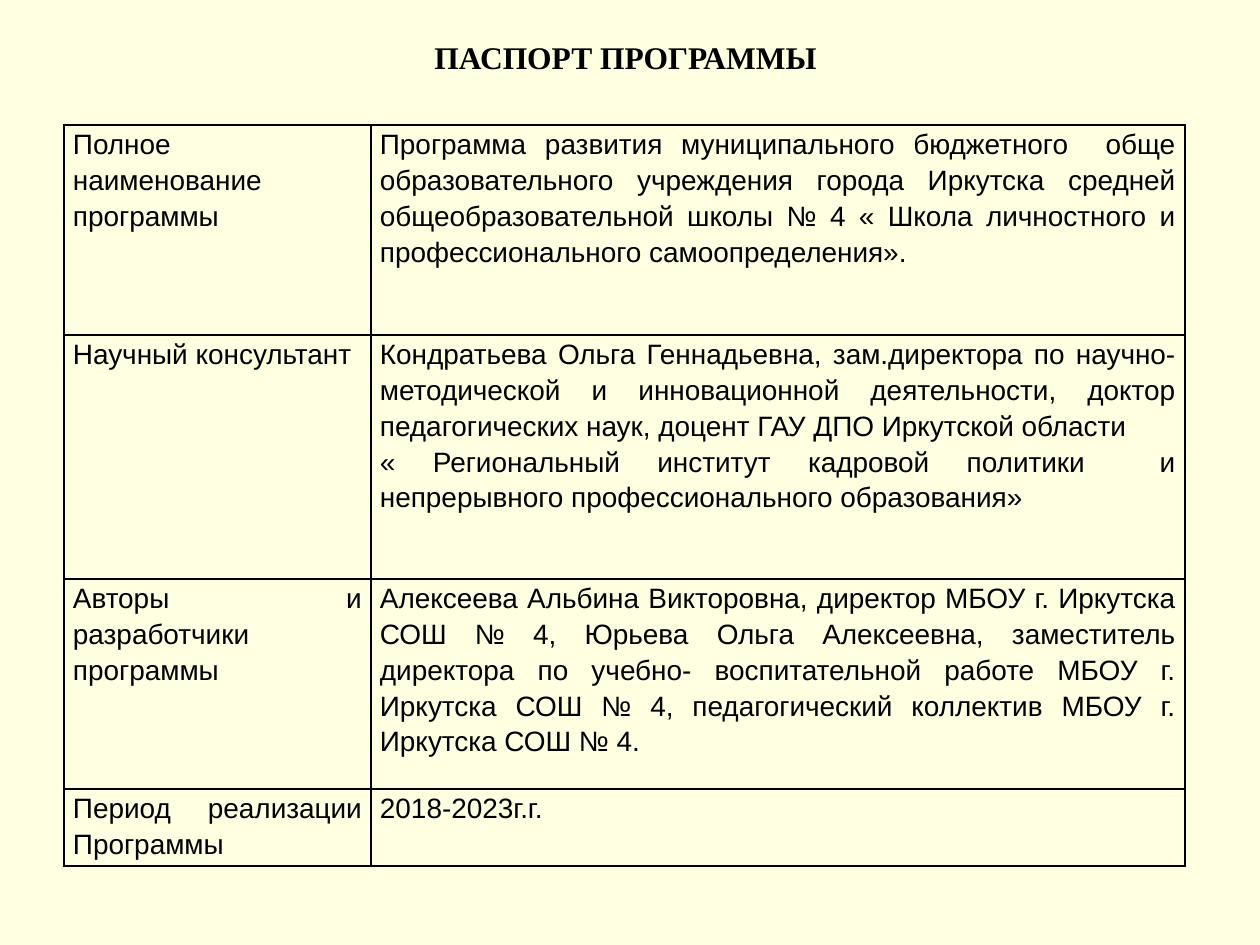
import pptx
import pptx.dml.color
import pptx.enum.text
import pptx.oxml
import pptx.oxml.ns
import pptx.util
from dataclasses import dataclass
from lxml import etree


@dataclass(frozen=True)
class Theme:
    background: str = "FFFFE1"
    ink: str = "000000"
    title_font: str = "Times New Roman"
    body_font: str = "Arial"
    title_size: int = 18
    body_size: int = 16
    line_spacing: float = 1.15
    border_pt: int = 1


THEME = Theme()
EMU_PER_PX = 914400 / 126
ALIGN = pptx.enum.text.PP_ALIGN


def px(length):
    return pptx.util.Emu(round(length * EMU_PER_PX))


def style_paragraph(paragraph, font_name, size, alignment, bold=False):
    paragraph.alignment = alignment
    paragraph.line_spacing = THEME.line_spacing
    for run in paragraph.runs:
        run.font.name = font_name
        run.font.size = pptx.util.Pt(size)
        run.font.bold = bold
        run.font.color.rgb = pptx.dml.color.RGBColor.from_string(THEME.ink)


PASSPORT = [
    (210, "Полное наименование программы",
     "Программа развития муниципального бюджетного  обще образовательного "
     "учреждения города Иркутска средней общеобразовательной школы № 4 "
     "« Школа личностного и профессионального самоопределения»."),
    (244, "Научный консультант",
     "Кондратьева Ольга Геннадьевна, зам.директора по научно-методической и "
     "инновационной деятельности, доктор педагогических наук, доцент ГАУ ДПО "
     "Иркутской области \n"
     "« Региональный институт кадровой политики  и непрерывного "
     "профессионального образования»"),
    (210, "Авторы и разработчики программы ",
     "Алексеева Альбина Викторовна, директор МБОУ г. Иркутска СОШ № 4, "
     "Юрьева Ольга Алексеевна, заместитель директора по учебно- "
     "воспитательной работе МБОУ г. Иркутска СОШ № 4, педагогический "
     "коллектив МБОУ г. Иркутска СОШ № 4."),
    (77, "Период реализации Программы ", "2018-2023г.г."),
]
COLUMN_WIDTHS = [307, 814]

presentation = pptx.Presentation()
presentation.slide_width = px(1260)
presentation.slide_height = px(945)
slide = presentation.slides.add_slide(presentation.slide_layouts[6])
slide.background.fill.solid()
slide.background.fill.fore_color.rgb = pptx.dml.color.RGBColor.from_string(THEME.background)

heading = slide.shapes.add_textbox(px(422), px(26), px(412), px(57)).text_frame
heading.word_wrap = False
heading.auto_size = pptx.enum.text.MSO_AUTO_SIZE.SHAPE_TO_FIT_TEXT
heading.text = "ПАСПОРТ ПРОГРАММЫ"
style_paragraph(heading.paragraphs[0], THEME.title_font, THEME.title_size, ALIGN.LEFT, bold=True)
heading.paragraphs[0].space_after = pptx.util.Pt(10)

table_height = sum(height for height, _, _ in PASSPORT)
passport = slide.shapes.add_table(
    len(PASSPORT), len(COLUMN_WIDTHS),
    px(64), px(125), px(sum(COLUMN_WIDTHS)), px(table_height)).table
passport.first_row = False
passport.horz_banding = False
for column, width in zip(passport.columns, COLUMN_WIDTHS):
    column.width = px(width)

for row, (height, *entries) in zip(passport.rows, PASSPORT):
    row.height = px(height)
    for cell, entry in zip(row.cells, entries):
        cell.margin_left = cell.margin_right = px(9)
        cell.margin_top = cell.margin_bottom = 0
        cell.text_frame.text = entry
        for paragraph in cell.text_frame.paragraphs:
            style_paragraph(paragraph, THEME.body_font, THEME.body_size, ALIGN.JUSTIFY)
        properties = cell._tc.get_or_add_tcPr()
        for side in ("lnL", "lnR", "lnT", "lnB"):
            border = etree.SubElement(properties, pptx.oxml.ns.qn(f"a:{side}"),
                                      w=str(pptx.util.Pt(THEME.border_pt)))
            paint = etree.SubElement(border, pptx.oxml.ns.qn("a:solidFill"))
            etree.SubElement(paint, pptx.oxml.ns.qn("a:srgbClr"), val=THEME.ink)
        cell.fill.background()

presentation.save("out.pptx")
